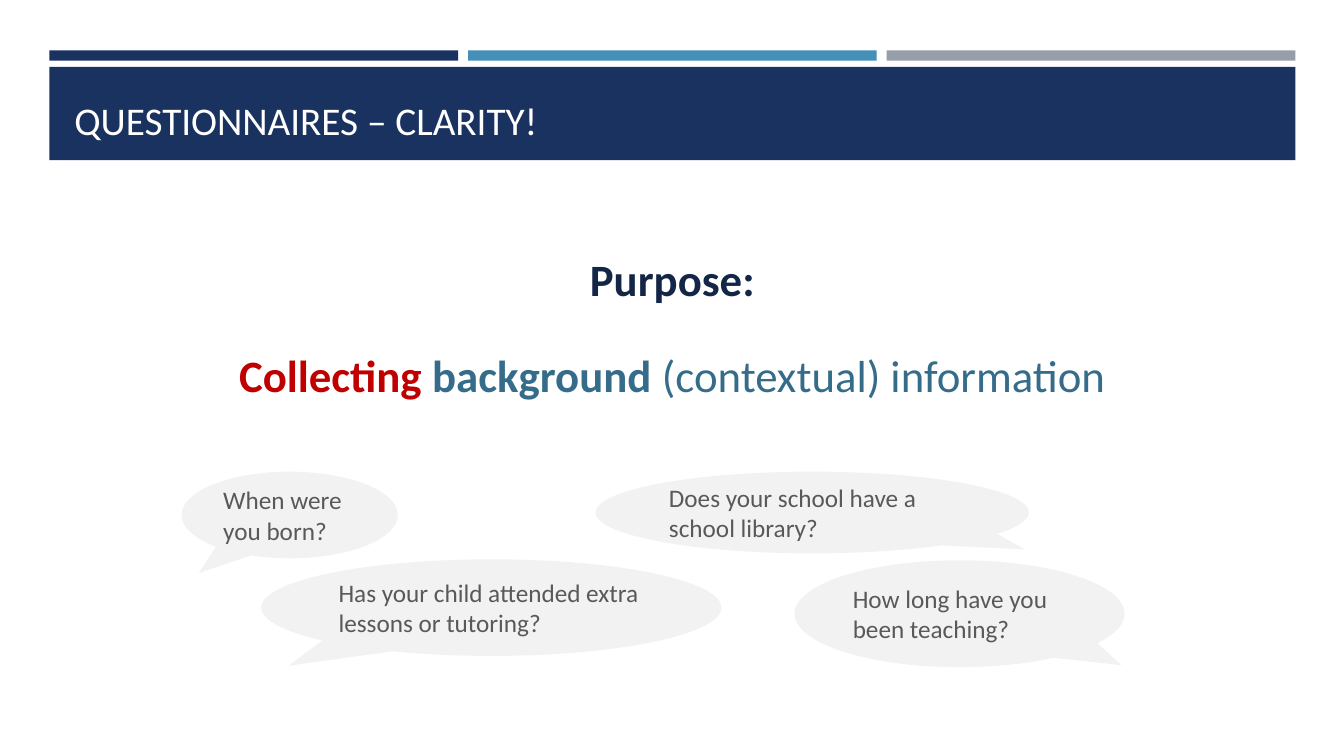
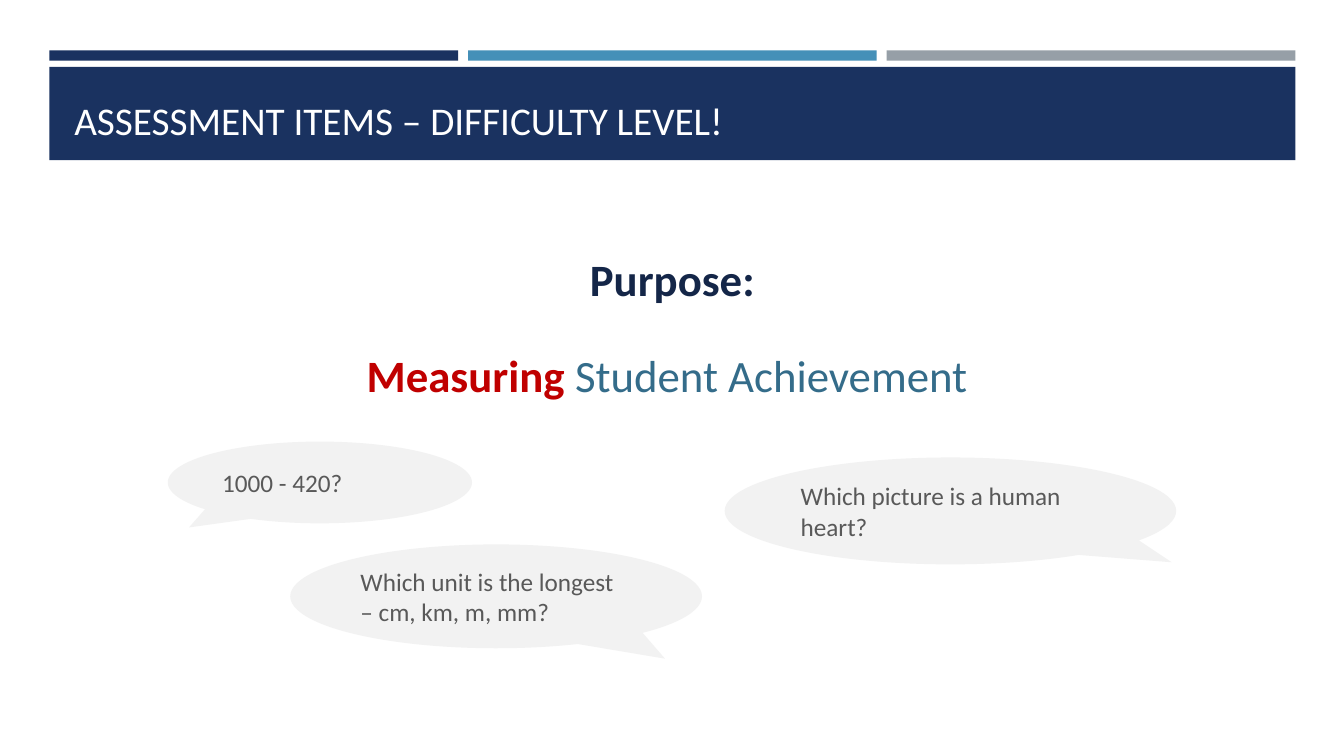
from dataclasses import dataclass

from pptx import Presentation
from pptx.dml.color import RGBColor
from pptx.enum.shapes import MSO_SHAPE
from pptx.enum.text import MSO_ANCHOR, PP_ALIGN
from pptx.util import Inches, Pt


@dataclass(frozen=True)
class Theme:
    """Colours, font and type sizes shared by the slides."""
    navy: str = "1A3260"
    blue: str = "4590B8"
    grey: str = "969FA7"
    white: str = "FFFFFF"
    ink: str = "142648"
    teal: str = "346C8A"
    red: str = "C00000"
    bubble: str = "F2F2F2"
    speech: str = "595959"
    font: str = "Calibri"
    title_size: int = 28
    purpose_size: int = 32
    speech_size: int = 18


THEME = Theme()


@dataclass(frozen=True)
class Box:
    """A rectangle whose areas are given in percent of its own size."""
    left: float
    top: float
    width: float
    height: float

    def area(self, x, y, width, height):
        """Return the box at the given percentages of this one."""
        return Box(self.left + self.width * x / 100,
                   self.top + self.height * y / 100,
                   self.width * width / 100,
                   self.height * height / 100)

    def emu(self):
        """Return left, top, width and height for python-pptx."""
        return [round(side) for side in
                (self.left, self.top, self.width, self.height)]


PAGE = Box(0, 0, Inches(13.33), Inches(7.5))
HEADER = PAGE.area(3.68, 6.67, 92.7, 14.53)
PURPOSE = PAGE.area(13.2, 31.5, 73.65, 23.5)
QUESTIONS = PAGE.area(10, 56, 80, 34)

BAR_WIDTH, BAR_GAP = 32.8, 0.8


def write(holder, *runs, size, color, bold=False, align=PP_ALIGN.LEFT,
          anchor=MSO_ANCHOR.MIDDLE):
    """Write one paragraph of runs, each a text or a (text, format) pair."""
    frame = holder.text_frame
    frame.word_wrap = True
    frame.vertical_anchor = anchor
    paragraph = frame.paragraphs[0]
    paragraph.alignment = align
    for item in runs:
        text, changes = (item, {}) if isinstance(item, str) else item
        run = paragraph.add_run()
        run.text = text
        run.font.name = THEME.font
        run.font.size = Pt(size)
        run.font.bold = changes.get("bold", bold)
        run.font.color.rgb = RGBColor.from_string(changes.get("color", color))


def add_filled(slide, preset, box, fill):
    """Add a flat preset shape without outline or shadow."""
    shape = slide.shapes.add_shape(preset, *box.emu())
    shape.shadow.inherit = False
    shape.fill.solid()
    shape.fill.fore_color.rgb = RGBColor.from_string(fill)
    shape.line.fill.background()
    return shape


def add_header(slide, box, title):
    """Place the three accent bars, the title band and the title."""
    for column, color in enumerate((THEME.navy, THEME.blue, THEME.grey)):
        bar = box.area(column * (BAR_WIDTH + BAR_GAP), 0, BAR_WIDTH, 9.3)
        add_filled(slide, MSO_SHAPE.RECTANGLE, bar, color)
    add_filled(slide, MSO_SHAPE.RECTANGLE, box.area(0, 15, 100, 85), THEME.navy)
    heading = slide.shapes.add_textbox(*box.area(1.2, 27.5, 97.6, 61.5).emu())
    write(heading, title, size=THEME.title_size, color=THEME.white,
          anchor=MSO_ANCHOR.BOTTOM)


def add_purpose(slide, box, statement):
    """Place the purpose label above its statement."""
    label = ("Purpose:", {"color": THEME.ink, "bold": True})
    for top, runs in ((0, [label]), (54, statement)):
        line = slide.shapes.add_textbox(*box.area(0, top, 100, 46).emu())
        write(line, *runs, size=THEME.purpose_size, color=THEME.teal,
              align=PP_ALIGN.CENTER)


def add_questions(slide, box, questions):
    """Place sample questions in speech bubbles with their tails."""
    for question, place, tail in questions:
        bubble = add_filled(slide, MSO_SHAPE.OVAL_CALLOUT, box.area(*place),
                            THEME.bubble)
        for index, offset in enumerate(tail):
            bubble.adjustments[index] = offset
        write(bubble, question, size=THEME.speech_size, color=THEME.speech)


def add_purpose_slide(deck, title, statement, questions):
    """Build one slide: header, purpose and sample questions."""
    slide = deck.slides.add_slide(deck.slide_layouts[6])
    add_header(slide, HEADER, title)
    add_purpose(slide, PURPOSE, statement)
    add_questions(slide, QUESTIONS, questions)


def main():
    """Build and save the presentation."""
    deck = Presentation()
    deck.slide_width, deck.slide_height = PAGE.width, PAGE.height
    key_word = {"color": THEME.red, "bold": True}
    add_purpose_slide(
        deck, "QUESTIONNAIRES – CLARITY!",
        [("Collecting ", key_word), ("background", {"bold": True}),
         " (contextual) information"],
        [("When were you born?", (4.4, 18.8, 20.1, 33.7), (-0.42, 0.67)),
         ("Does your school have a school library?",
          (42.9, 18.8, 40.3, 31.8), (0.49, 0.45)),
         ("Has your child attended extra lessons or tutoring?",
          (11.8, 52.9, 42.8, 37.6), (-0.44, 0.6)),
         ("How long have you been teaching?",
          (61.4, 53.3, 30.7, 41.6), (0.49, 0.48))])
    add_purpose_slide(
        deck, "ASSESSMENT ITEMS – DIFFICULTY LEVEL!",
        [("Measuring", key_word), " Student Achievement "],
        [("Which unit is the longest – cm, km, m, mm?",
          (14.5, 47.1, 38.3, 40.4), (0.41, 0.6)),
         ("1000 - 420?", (3.1, 7.1, 28.3, 31.8), (-0.43, 0.55)),
         ("Which picture is a human heart?",
          (54.9, 13.3, 42, 41.6), (0.49, 0.48))])
    deck.save("out.pptx")


if __name__ == "__main__":
    main()
